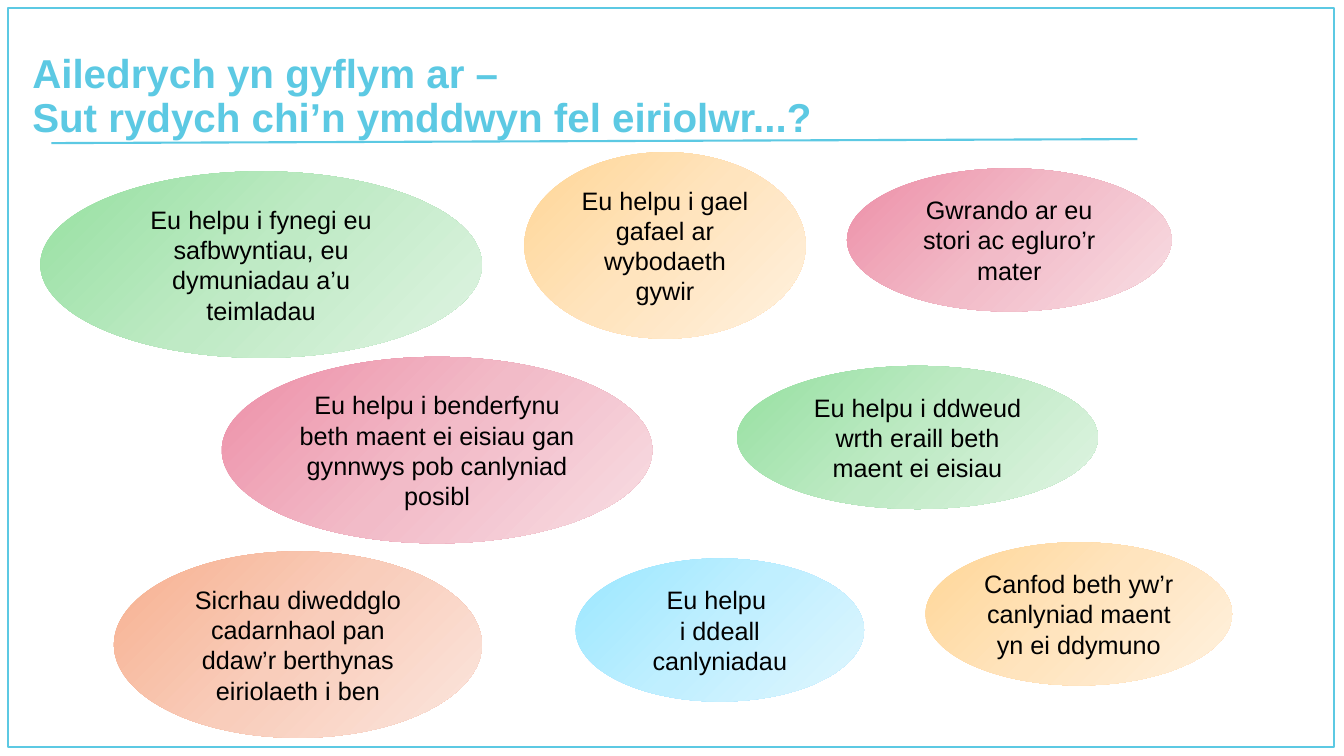
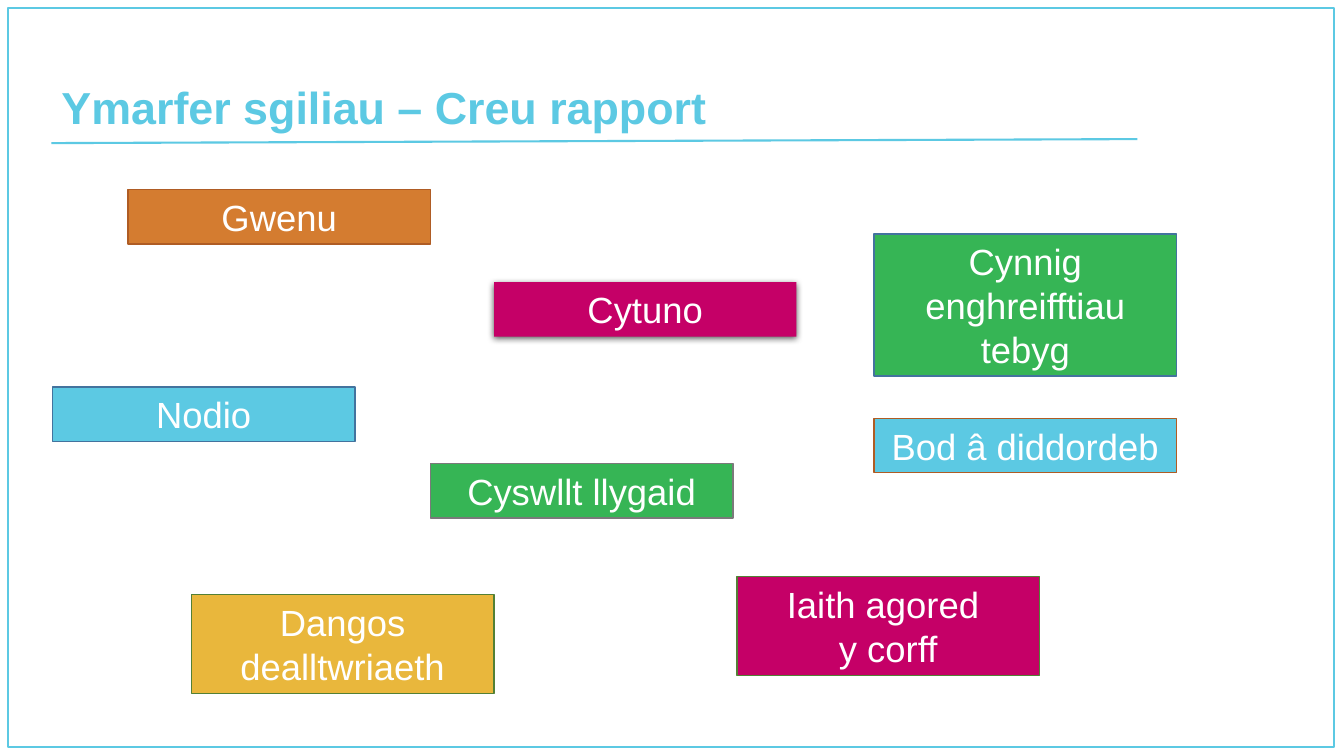
from lxml.etree import SubElement
from pptx import Presentation
from pptx.dml.color import RGBColor
from pptx.enum.shapes import MSO_CONNECTOR, MSO_SHAPE
from pptx.enum.text import MSO_ANCHOR, MSO_AUTO_SIZE, PP_ALIGN
from pptx.oxml.ns import qn
from pptx.util import Inches, Pt

FONT = "Arial"
SKY, GREEN, MAGENTA, ORANGE, GOLD = "5CC9E3", "36B555", "C50067", "D47C30", "E9B73C"
RUST, MOSS, STEEL, GREY = "AF5C24", "538035", "43739E", "7A7A7A"
BLACK, WHITE = "000000", "FFFFFF"

# Gradient stops at 0, 50 and 100 %
AMBER_FADE = ("FFD696", "FFE4BE", "FFF1DF")
GREEN_FADE = ("95E0A0", "BFEAC5", "E0F4E3")
PINK_FADE = ("ED8EA7", "F2BBC8", "F8DEE4")
PEACH_FADE = ("F7B08F", "F9CDBB", "FBE6DE")
BLUE_FADE = ("9AE7FF", "C0EFFF", "E0F6FE")

BUBBLES = [
    ((5.2, 1.51, 2.79, 1.85), AMBER_FADE, "Eu helpu i gael gafael ar wybodaeth gywir"),
    ((0.4, 1.7, 4.38, 1.85), GREEN_FADE,
     "Eu helpu i fynegi eu safbwyntiau, eu dymuniadau a’u teimladau"),
    ((8.4, 1.67, 3.22, 1.42), PINK_FADE, "Gwrando ar eu stori ac egluro’r mater"),
    ((2.2, 3.54, 4.27, 1.85), PINK_FADE,
     "Eu helpu i benderfynu beth maent ei eisiau gan gynnwys pob canlyniad posibl"),
    ((1.13, 5.47, 3.65, 1.85), PEACH_FADE,
     "Sicrhau diweddglo cadarnhaol pan ddaw’r berthynas eiriolaeth i ben"),
    ((5.71, 5.54, 2.86, 1.42), BLUE_FADE, "Eu helpu \vi ddeall canlyniadau"),
    ((9.18, 5.38, 3.04, 1.42), AMBER_FADE,
     "Canfod beth yw’r canlyniad maent yn ei ddymuno"),
    ((7.31, 3.63, 3.58, 1.42), GREEN_FADE,
     "Eu helpu i ddweud wrth eraill beth maent ei eisiau"),
]

CARD_WIDTH = 3
CARD_HEIGHTS = {1: 0.54, 2: 0.98, 3: 1.41}  # by number of text lines
# left, top, text lines, fill, outline (None gives a shadow instead), text
CARDS = [
    (1.27, 1.88, 1, ORANGE, RUST, "Gwenu"),
    (7.31, 5.72, 2, MAGENTA, MOSS, "Iaith agored \vy corff"),
    (1.9, 5.9, 2, GOLD, MOSS, "Dangos dealltwriaeth"),
    (8.67, 4.15, 1, SKY, RUST, "Bod â diddordeb"),
    (4.27, 4.6, 1, GREEN, GREY, "Cyswllt llygaid"),
    (0.52, 3.84, 1, SKY, STEEL, "Nodio"),
    (8.67, 2.32, 3, GREEN, STEEL, "Cynnig enghreifftiau tebyg"),
    (4.9, 2.8, 1, MAGENTA, None, "Cytuno"),
]


def rgb(value):
    return RGBColor.from_string(value)


def write(tf, text, size, color, bold=False, align=PP_ALIGN.CENTER):
    p = tf.paragraphs[0]
    p.text = text
    p.alignment = align
    for r in p.runs:
        for name, value in dict(name=FONT, size=Pt(size), bold=bold).items():
            setattr(r.font, name, value)
        r.font.color.rgb = rgb(color)
    return p


def add_panel(slide, kind, box, text="", size=18, color=BLACK, outline=None):
    sp = slide.shapes.add_shape(kind, *map(Inches, box))
    sp.shadow.inherit = False
    if outline:
        sp.line.color.rgb = rgb(outline)
        sp.line.width = Pt(1)
    else:
        sp.line.fill.background()
    if text:
        sp.text_frame.word_wrap = True
        sp.text_frame.auto_size = MSO_AUTO_SIZE.SHAPE_TO_FIT_TEXT
        write(sp.text_frame, text, size, color)
    return sp


def fade(sp, colors):
    """Fill a shape with an evenly spaced diagonal gradient."""
    sp.fill.gradient()
    sp.fill.gradient_angle = 315
    stops = sp.element.spPr.find(qn("a:gradFill")).find(qn("a:gsLst"))
    for stop in list(stops):
        stops.remove(stop)
    for i, color in enumerate(colors):
        stop = SubElement(stops, qn("a:gs"), pos=str(i * 100000 // (len(colors) - 1)))
        SubElement(stop, qn("a:srgbClr"), val=color)


def drop_shadow(sp):
    effects = sp.element.spPr.find(qn("a:effectLst"))
    shadow = SubElement(effects, qn("a:outerShdw"), blurRad=str(Pt(4.5)),
                        dist=str(Pt(1.5)), dir="5400000", algn="ctr", rotWithShape="0")
    color = SubElement(shadow, qn("a:srgbClr"), val=BLACK)
    SubElement(color, qn("a:alpha"), val="63000")


def add_frame(slide):
    """Move the title rule and page border to the layout all slides share."""
    rule = slide.shapes.add_connector(
        MSO_CONNECTOR.STRAIGHT, *map(Inches, (0.51, 1.42, 11.28, 1.38)))
    rule.line.color.rgb = rgb(SKY)
    rule.line.width = Pt(1.5)
    SubElement(rule.element.spPr, qn("a:effectLst"))
    border = add_panel(slide, MSO_SHAPE.RECTANGLE, (0.08, 0.08, 13.15, 7.33), outline=SKY)
    border.fill.background()
    for part in (rule, border):
        slide.slide_layout.shapes.element.append(part.element)


def add_title(slide, box, text, size):
    title = slide.shapes.title
    for name, value in zip(("left", "top", "width", "height"), box):
        setattr(title, name, Inches(value))
    tf = title.text_frame
    tf.word_wrap = True
    tf.auto_size = MSO_AUTO_SIZE.NONE
    tf.vertical_anchor = MSO_ANCHOR.BOTTOM
    p = write(tf, text, size, SKY, bold=True, align=PP_ALIGN.LEFT)
    p.line_spacing = 0.9


def build_advocate(slide):
    add_title(slide, (0.22, 0.81, 11.5, 0.64),
              "Ailedrych yn gyflym ar – \vSut rydych chi’n ymddwyn fel eiriolwr...?", 28.8)
    for box, colors, text in BUBBLES:
        fade(add_panel(slide, MSO_SHAPE.OVAL, box, text), colors)


def build_rapport(slide):
    add_title(slide, (0.51, 0.29, 7.8, 1.09), "Ymarfer sgiliau – Creu rapport", 32)
    for left, top, lines, color, outline, text in CARDS:
        box = (left, top, CARD_WIDTH, CARD_HEIGHTS[lines])
        sp = add_panel(slide, MSO_SHAPE.RECTANGLE, box, text, 26, WHITE, outline)
        sp.fill.solid()
        sp.fill.fore_color.rgb = rgb(color)
        if outline is None:
            drop_shadow(sp)


def main():
    prs = Presentation()
    prs.slide_width, prs.slide_height = Inches(13.33), Inches(7.5)
    layout = prs.slide_layouts.get_by_name("Title Only")
    slides = [prs.slides.add_slide(layout) for _ in range(2)]
    add_frame(slides[0])
    for build, slide in zip((build_advocate, build_rapport), slides):
        build(slide)
    prs.save("out.pptx")


if __name__ == "__main__":
    main()
